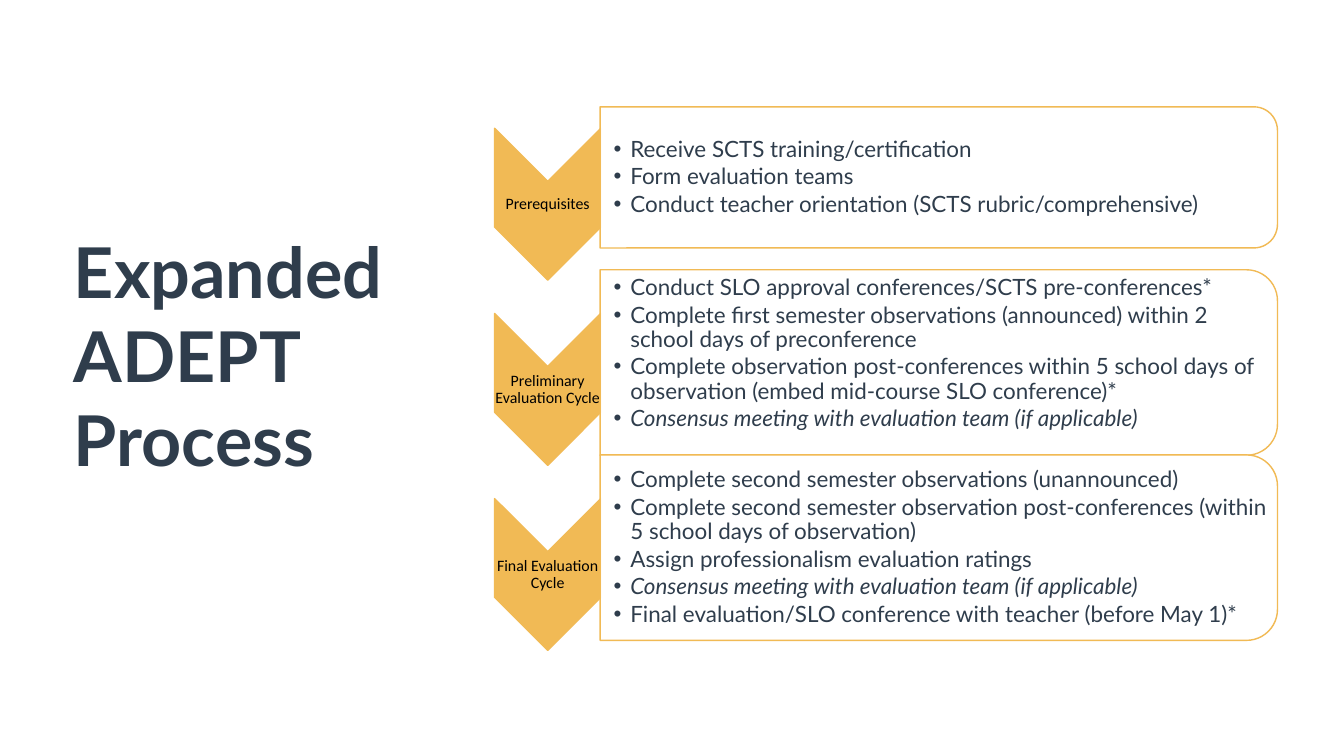
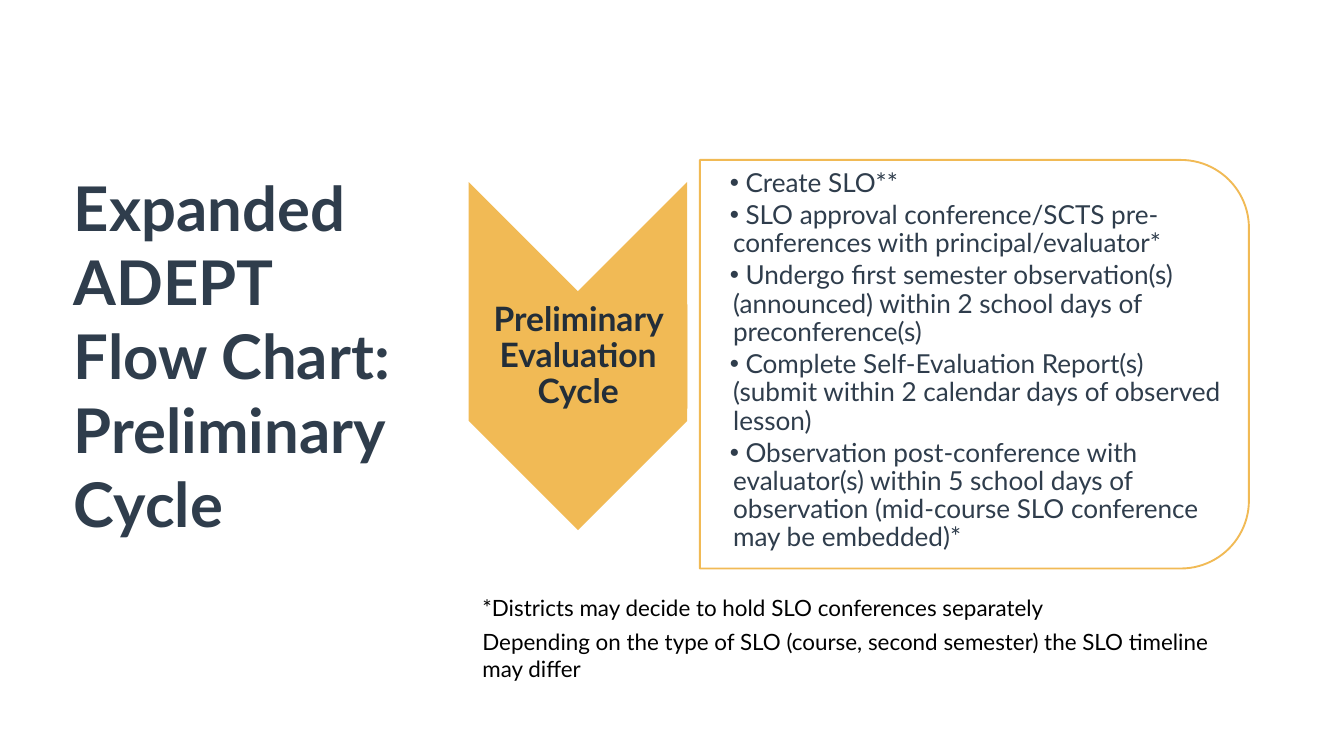
"""Build two slides on the expanded ADEPT process and its preliminary cycle."""
from lxml.etree import SubElement
from pptx import Presentation
from pptx.dml.color import RGBColor
from pptx.enum.shapes import MSO_SHAPE
from pptx.enum.text import MSO_ANCHOR, PP_ALIGN
from pptx.oxml.ns import qn
from pptx.util import Inches, Pt

GOLD = RGBColor(0xF1, 0xBA, 0x55)
SLATE = RGBColor(0x2F, 0x3D, 0x4C)
DARK_SLATE = RGBColor(0x23, 0x2E, 0x39)
WHITE = RGBColor(0xFF, 0xFF, 0xFF)
BLACK = RGBColor(0x00, 0x00, 0x00)
CONSENSUS = "Consensus meeting with evaluation team (if applicable)"


def add_turned_shape(page, kind, center_x, center_y, width, height, fill, line_width):
    """Add a shape turned by 90 degrees; width and height are as seen."""
    shape = page.shapes.add_shape(
        kind, Inches(center_x - height / 2), Inches(center_y - width / 2),
        Inches(height), Inches(width))
    shape.rotation = 90
    shape.shadow.inherit = False
    shape.fill.solid()
    shape.fill.fore_color.rgb = fill
    if line_width:
        shape.line.color.rgb = GOLD
        shape.line.width = Pt(line_width)
    else:
        shape.line.fill.background()
    if fill == WHITE:
        color = shape.fill._xPr.find(qn("a:solidFill"))[0]
        SubElement(color, qn("a:alpha")).set("val", "90000")
    return shape


def write_text(box, texts, size, color, font="Lato", bold=False, align=PP_ALIGN.LEFT,
               anchor=MSO_ANCHOR.MIDDLE, insets=(0.1, 0.05, 0.1, 0.05),
               line_spacing=1.0, space_after=0, indent=0, bullet=False):
    """Fill a box with one paragraph per text and format it."""
    frame = box.text_frame
    frame.word_wrap = True
    frame.vertical_anchor = anchor
    frame.margin_left, frame.margin_top, frame.margin_right, frame.margin_bottom = map(Inches, insets)
    for number, text in enumerate(texts):
        para = frame.add_paragraph() if number else frame.paragraphs[0]
        para.text = text
        para.alignment = align
        para.line_spacing = line_spacing
        para.space_after = Pt(space_after)
        properties = para._p.get_or_add_pPr()
        properties.set("marL", str(Inches(indent)))
        if bullet:
            para.level = 1
            properties.set("indent", str(-Inches(indent)))
            SubElement(properties, qn("a:buFont")).set("typeface", "Arial")
            SubElement(properties, qn("a:buChar")).set("char", "•")
        for span in para.runs:
            span.font.name = font
            span.font.size = Pt(size)
            span.font.bold = bold
            span.font.italic = text == CONSENSUS
            span.font.color.rgb = color


deck = Presentation()
deck.slide_width = Inches(20)
deck.slide_height = Inches(11.25)

pages = []
for title, title_size in [("Expanded ADEPT Process", 75),
                          ("Expanded ADEPT Flow Chart:\vPreliminary Cycle", 66)]:
    page = deck.slides.add_slide(deck.slide_layouts[6])
    page.background.fill.solid()
    page.background.fill.fore_color.rgb = WHITE
    title_box = page.shapes.add_textbox(Inches(1), Inches(1.38), Inches(5.08), Inches(7.8))
    write_text(title_box, [title], title_size, SLATE, bold=True)
    pages.append(page)
process_page, cycle_page = pages

STAGES = [
    ("Prerequisites", 2.1, 0.02, [
        "Receive SCTS training/certification",
        "Form evaluation teams",
        "Conduct teacher orientation (SCTS rubric/comprehensive)"]),
    ("Preliminary Evaluation Cycle", 2.76, 0.28, [
        "Conduct SLO approval conferences/SCTS pre-conferences*",
        "Complete first semester observations (announced) within 2 school days of preconference",
        "Complete observation post-conferences within 5 school days of observation "
        "(embed mid-course SLO conference)*",
        CONSENSUS]),
    ("Final Evaluation Cycle", 2.76, 0.02, [
        "Complete second semester observations (unannounced)",
        "Complete second semester observation post-conferences "
        "(within 5 school days of observation)",
        "Assign professionalism evaluation ratings",
        CONSENSUS,
        "Final evaluation/SLO conference with teacher (before May 1)*"]),
]
for row, (stage, panel_height, bottom_inset, steps) in enumerate(STAGES):
    center = 2.64 + row * 2.755
    add_turned_shape(process_page, MSO_SHAPE.CHEVRON, 8.15, center + 0.4, 1.58, 2.26, GOLD, 1.5)
    label = process_page.shapes.add_textbox(
        Inches(7.36), Inches(center + 0.06), Inches(1.58), Inches(0.68))
    write_text(label, [stage], 17, BLACK, font="Calibri", align=PP_ALIGN.CENTER,
               insets=(0.01,) * 4, line_spacing=0.9)
    add_turned_shape(process_page, MSO_SHAPE.ROUND_2_SAME_RECTANGLE, 13.97, center,
                     10.08, panel_height, WHITE, 1.5)
    text_height = panel_height - 0.26
    step_box = process_page.shapes.add_textbox(
        Inches(8.94), Inches(center - text_height / 2), Inches(9.95), Inches(text_height))
    write_text(step_box, steps, 24, SLATE, insets=(0.19, 0.02, 0.02, bottom_inset),
               line_spacing=0.9, space_after=3.6, indent=0.25, bullet=True)

add_turned_shape(cycle_page, MSO_SHAPE.CHEVRON, 8.6, 5.3, 3.25, 5.18, GOLD, 0)
cycle_label = cycle_page.shapes.add_shape(
    MSO_SHAPE.RECTANGLE, Inches(6.98), Inches(4.53), Inches(3.25), Inches(1.55))
cycle_label.shadow.inherit = False
cycle_label.fill.solid()
cycle_label.fill.fore_color.rgb = GOLD
cycle_label.line.fill.background()
write_text(cycle_label, ["Preliminary Evaluation Cycle"], 36, DARK_SLATE, bold=True,
           align=PP_ALIGN.CENTER, insets=(0.01,) * 4, line_spacing=0.9)

add_turned_shape(cycle_page, MSO_SHAPE.ROUND_2_SAME_RECTANGLE, 14.5, 5.42, 8.17, 6.08, WHITE, 2)
cycle_steps = cycle_page.shapes.add_textbox(Inches(10.8), Inches(2.71), Inches(7.46), Inches(5.33))
write_text(cycle_steps, [
    " Create SLO**",
    " SLO approval conference/SCTS pre-conferences with principal/evaluator*",
    " Undergo first semester observation(s) (announced) within 2 school days of preconference(s)",
    " Complete Self-Evaluation Report(s) (submit within 2 calendar days of observed lesson)",
    " Observation post-conference with evaluator(s) within 5 school days of observation "
    "(mid-course SLO conference may be embedded)*",
], 28, SLATE, insets=(0.06, 0.01, 0.01, 0.01), line_spacing=0.9, space_after=4.2,
    indent=0.05, bullet=True)

footnote = cycle_page.shapes.add_textbox(Inches(6.7), Inches(8.79), Inches(11.38), Inches(1.42))
write_text(footnote, [
    "*Districts may decide to hold SLO conferences separately",
    "Depending on the type of SLO (course, second semester) the SLO timeline may differ",
], 24, BLACK, anchor=MSO_ANCHOR.TOP, space_after=7.5, indent=0.38)

deck.save("out.pptx")
